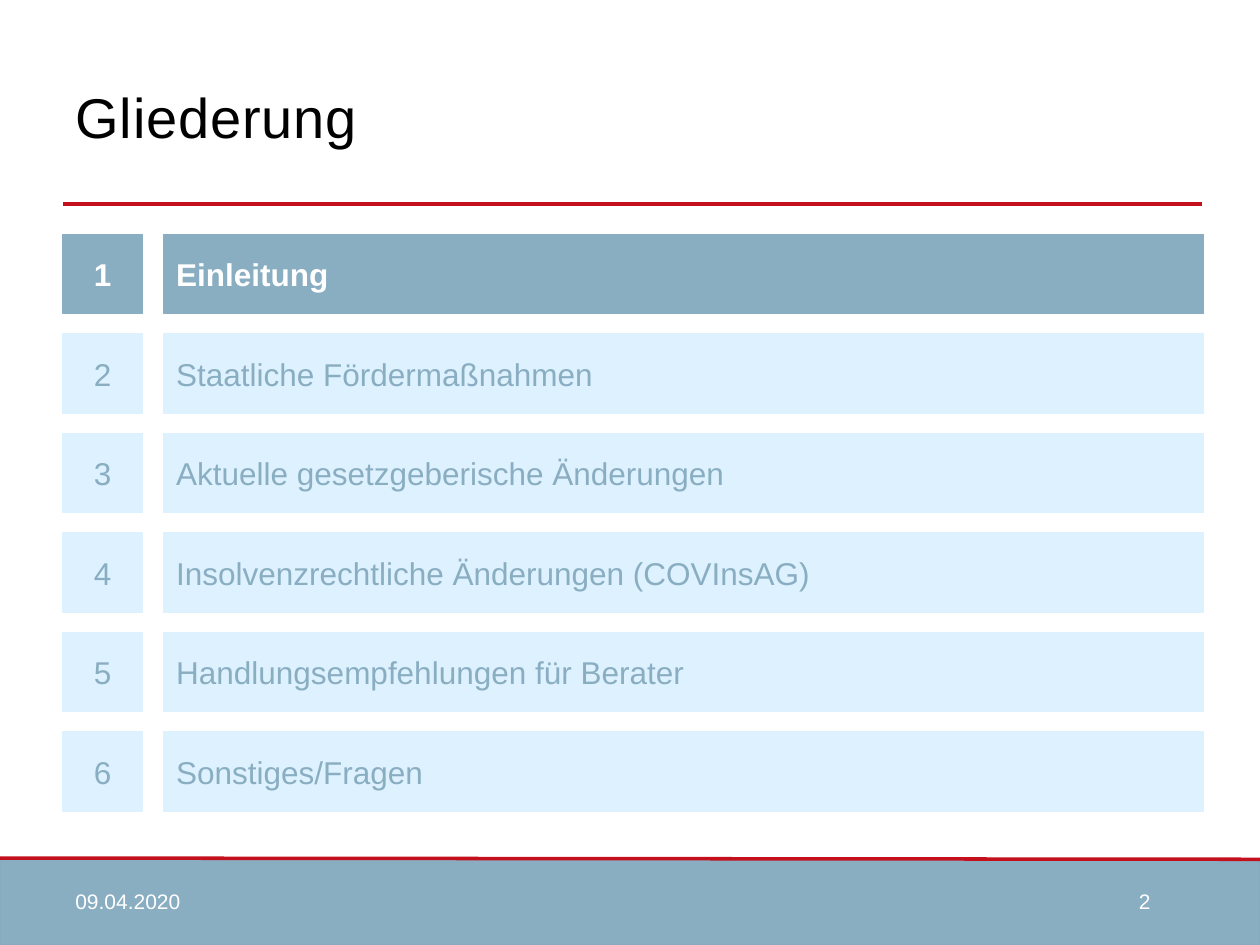
from pptx import Presentation
from pptx.dml.color import RGBColor
from pptx.enum.shapes import MSO_CONNECTOR as CONNECTOR, MSO_SHAPE as SHAPE
from pptx.enum.text import MSO_ANCHOR as ANCHOR, PP_ALIGN as ALIGN
from pptx.oxml.xmlchemy import OxmlElement
from pptx.util import Inches, Pt

BLUE, PALE, RED, WHITE, BLACK = "8AAEC1", "DDF1FF", "C3101C", "FFFFFF", "000000"


def rgb(color):
    return RGBColor.from_string(color)


def write(shape, text, size, color, bold=False, align=ALIGN.LEFT):
    frame = shape.text_frame
    frame.word_wrap = True
    frame.vertical_anchor = ANCHOR.MIDDLE
    frame.paragraphs[0].alignment = align
    run = frame.paragraphs[0].add_run()
    run.text = text
    run.font.name = "Arial"
    run.font.size = Pt(size)
    run.font.bold = bold
    run.font.color.rgb = rgb(color)
    return run


prs = Presentation()
prs.slide_width, prs.slide_height = Inches(10), Inches(7.5)
slide = prs.slides.add_slide(prs.slide_layouts[6])
shapes = slide.shapes

# Footer band
footer = shapes.add_shape(SHAPE.RECTANGLE, Inches(0), Inches(6.82), Inches(10), Inches(0.68))
footer.shadow.inherit = False
footer.fill.solid()
footer.fill.fore_color.rgb = rgb(BLUE)
footer.line.color.rgb = rgb("86ABBE")
footer.line.width = Pt(0.75)

# Red rules under the title and above the footer
for x1, y1, x2, y2 in [(0.5, 1.62, 9.54, 1.62), (0, 6.81, 10, 6.82)]:
    rule = shapes.add_connector(CONNECTOR.STRAIGHT, Inches(x1), Inches(y1), Inches(x2), Inches(y2))
    rule.line.color.rgb = rgb(RED)
    rule.line.width = Pt(2)
    rule._element.spPr.append(OxmlElement("a:effectLst"))

# Title
title = shapes.add_textbox(Inches(0.5), Inches(0.3), Inches(9.04), Inches(1.25))
heading = write(title, "Gliederung", 32, BLACK)
heading.font._element.set("spc", "50")

# Agenda: a number box and a topic bar per row, the current topic highlighted
topics = [
    "Einleitung",
    "Staatliche Fördermaßnahmen",
    "Aktuelle gesetzgeberische Änderungen",
    "Insolvenzrechtliche Änderungen (COVInsAG)",
    "Handlungsempfehlungen für Berater",
    "Sonstiges/Fragen",
]
current, first_top, pitch, height = 1, 1.86, 0.79, 0.63
for number, topic in enumerate(topics, start=1):
    top = first_top + (number - 1) * pitch
    active = number == current
    fill, ink = (BLUE, WHITE) if active else (PALE, BLUE)
    for left, width, text, align in [
        (0.5, height, str(number), ALIGN.CENTER),
        (1.3, 8.25, topic, ALIGN.LEFT),
    ]:
        cell = shapes.add_shape(SHAPE.RECTANGLE, Inches(left), Inches(top), Inches(width), Inches(height))
        cell.shadow.inherit = False
        cell.fill.solid()
        cell.fill.fore_color.rgb = rgb(fill)
        cell.line.color.rgb = rgb(fill)
        cell.line.width = Pt(0.75)
        write(cell, text, 18, ink, active, align)

# Date and page number
for left, width, text in [(0.5, 1.27, "09.04.2020"), (8.94, 0.56, "2")]:
    note = shapes.add_textbox(Inches(left), Inches(6.95), Inches(width), Inches(0.4))
    write(note, text, 12, WHITE)

prs.save("out.pptx")
